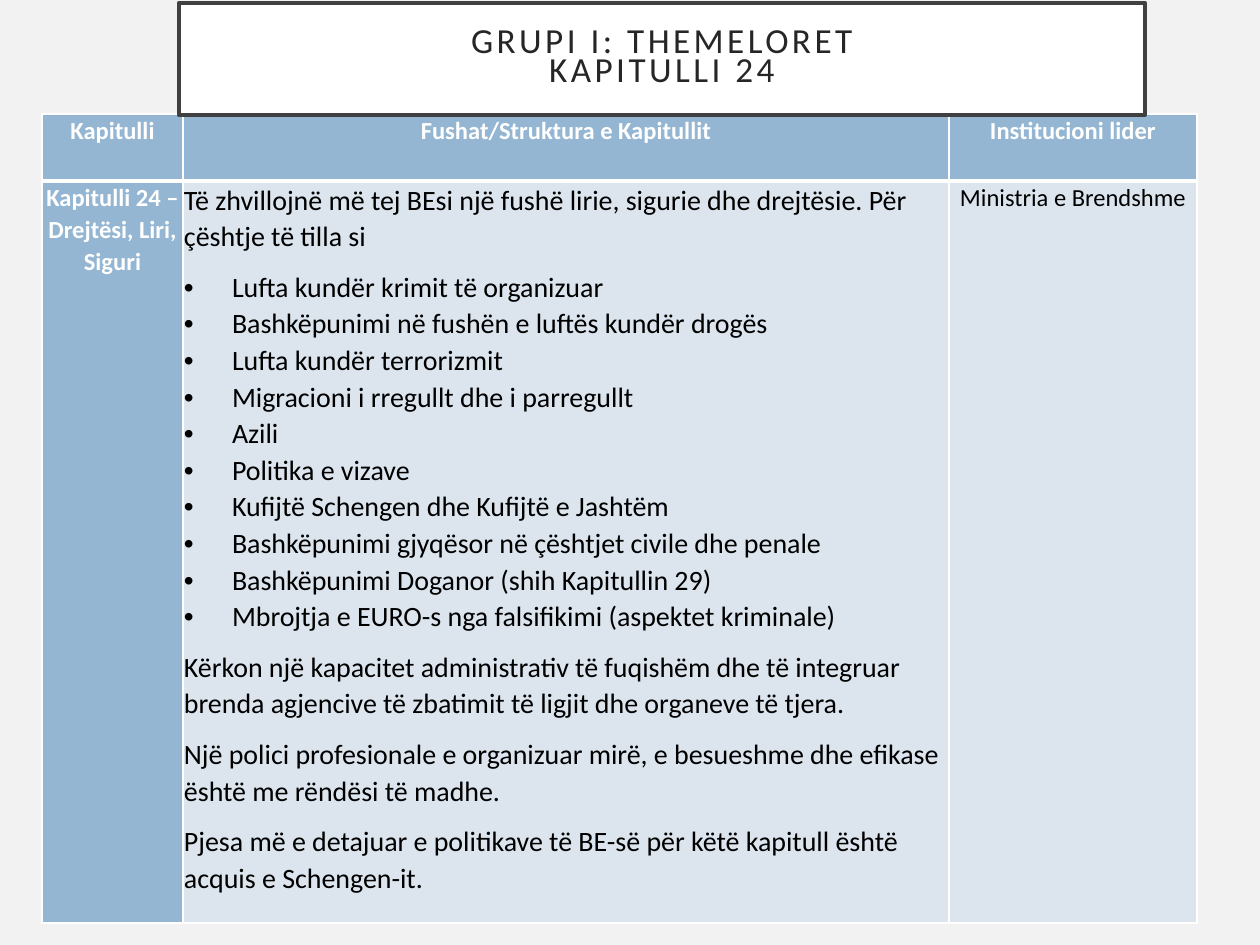
from lxml import etree
from pptx import Presentation
from pptx.dml.color import RGBColor
from pptx.enum.text import MSO_ANCHOR, MSO_AUTO_SIZE, PP_ALIGN
from pptx.oxml.ns import qn
from pptx.util import Pt

PX = 914400 / 126
LEFT, MID = PP_ALIGN.LEFT, PP_ALIGN.CENTER
WHITE = RGBColor(0xFF, 0xFF, 0xFF)
BLACK = RGBColor(0, 0, 0)
GREY = RGBColor(0xF2, 0xF2, 0xF2)
DARK = RGBColor(0x40, 0x40, 0x40)
INK = RGBColor(0x26, 0x26, 0x26)
BLUE = RGBColor(0x94, 0xB6, 0xD2)
PALE = RGBColor(0xDC, 0xE5, 0xEE)


def px(n):
    return round(n * PX)


def write(frame, text, size=14, color=BLACK, bold=False, align=MID,
          line=1.07, after=8, bullet=False, track=0):
    """Add one paragraph, using the empty first one if there is one."""
    para = frame.paragraphs[0]
    if para.runs:
        para = frame.add_paragraph()
    para.alignment, para.line_spacing = align, line
    para.space_before, para.space_after = Pt(0), Pt(after)
    if bullet:
        props = para._p.get_or_add_pPr()
        props.set("marL", str(px(48)))
        props.set("indent", str(px(-48)))
        etree.SubElement(props, qn("a:buFont"), typeface="Arial")
        etree.SubElement(props, qn("a:buChar"), char="•")
    run = para.add_run()
    run.text = text
    font = run.font
    font.name, font.size, font.bold = "Calibri", Pt(size), bold
    font.color.rgb = color
    if track:
        run._r.get_or_add_rPr().set("spc", str(track * 100))


deck = Presentation()
deck.slide_width, deck.slide_height = px(1260), px(945)
slide = deck.slides.add_slide(deck.slide_layouts[5])
slide.background.fill.solid()
slide.background.fill.fore_color.rgb = GREY

# Chapter table
widths, heights = [141, 766, 248], [67, 742]
table = slide.shapes.add_table(2, 3, px(42), px(114), px(sum(widths)),
                               px(sum(heights))).table
table.horz_banding = False
for col, width in zip(table.columns, widths):
    col.width = px(width)
for row, height in zip(table.rows, heights):
    row.height = px(height)

for r in range(2):
    for c in range(3):
        cell = table.cell(r, c)
        cell.margin_left = cell.margin_right = px(1)
        cell.margin_top = cell.margin_bottom = 0
        cell.vertical_anchor = MSO_ANCHOR.TOP
        props = cell._tc.get_or_add_tcPr()
        for side in "LRTB":
            thick = (side, r) in (("B", 0), ("T", 1))
            edge = etree.SubElement(props, qn("a:ln" + side),
                                    w=str(Pt(3 if thick else 0.96)))
            fill = etree.SubElement(edge, qn("a:solidFill"))
            etree.SubElement(fill, qn("a:srgbClr"), val=str(WHITE))
        cell.fill.solid()
        cell.fill.fore_color.rgb = BLUE if r == 0 or c == 0 else PALE

heads = [
    (0, 0, "Kapitulli"),
    (0, 1, "Fushat/Struktura e Kapitullit"),
    (0, 2, "Institucioni lider"),
    (1, 0, "Kapitulli 24 – Drejtësi, Liri, Siguri"),
]
for r, c, text in heads:
    write(table.cell(r, c).text_frame, text, color=WHITE, bold=True)
write(table.cell(1, 2).text_frame, "Ministria e Brendshme")

intro = ("Të zhvillojnë më tej BEsi një fushë lirie, sigurie dhe drejtësie. "
         "Për çështje të tilla si")
topics = [
    "Lufta kundër krimit të organizuar",
    "Bashkëpunimi në fushën e luftës kundër drogës",
    "Lufta kundër terrorizmit",
    "Migracioni i rregullt dhe i parregullt",
    "Azili",
    "Politika e vizave",
    "Kufijtë Schengen dhe Kufijtë e Jashtëm",
    "Bashkëpunimi gjyqësor në çështjet civile dhe penale",
    "Bashkëpunimi Doganor (shih Kapitullin 29)",
    "Mbrojtja e EURO-s nga falsifikimi (aspektet kriminale)",
]
notes = [
    "Kërkon një kapacitet administrativ të fuqishëm dhe të integruar "
    "brenda agjencive të zbatimit të ligjit dhe organeve të tjera.",
    "Një polici profesionale e organizuar mirë, e besueshme dhe efikase "
    "është me rëndësi të madhe.",
    "Pjesa më e detajuar e politikave të BE-së për këtë kapitull është "
    "acquis e Schengen-it.",
]
body = table.cell(1, 1).text_frame
write(body, intro, size=16, align=LEFT)
for topic in topics:
    write(body, topic, size=16, align=LEFT, bullet=True,
          after=8 if topic == topics[-1] else 0)
for note in notes:
    write(body, note, size=16, align=LEFT)

# Title, in front of the table
title = slide.shapes.title
slide.shapes._spTree.append(title._element)
title.left, title.top = px(179), px(3)
title.width, title.height = px(966), px(112)
title.fill.solid()
title.fill.fore_color.rgb = WHITE
title.line.color.rgb = DARK
title.line.width = Pt(2.5)
frame = title.text_frame
frame.word_wrap = True
frame.auto_size = MSO_AUTO_SIZE.NONE
frame.vertical_anchor = MSO_ANCHOR.MIDDLE
frame.margin_left = frame.margin_right = px(25)
frame.margin_top = frame.margin_bottom = px(25)
for text in ("GRUPI I: THEMELORET", "KAPITULLI 24"):
    write(frame, text, size=20.1, color=INK, line=0.7, after=0, track=2)

deck.save("out.pptx")
